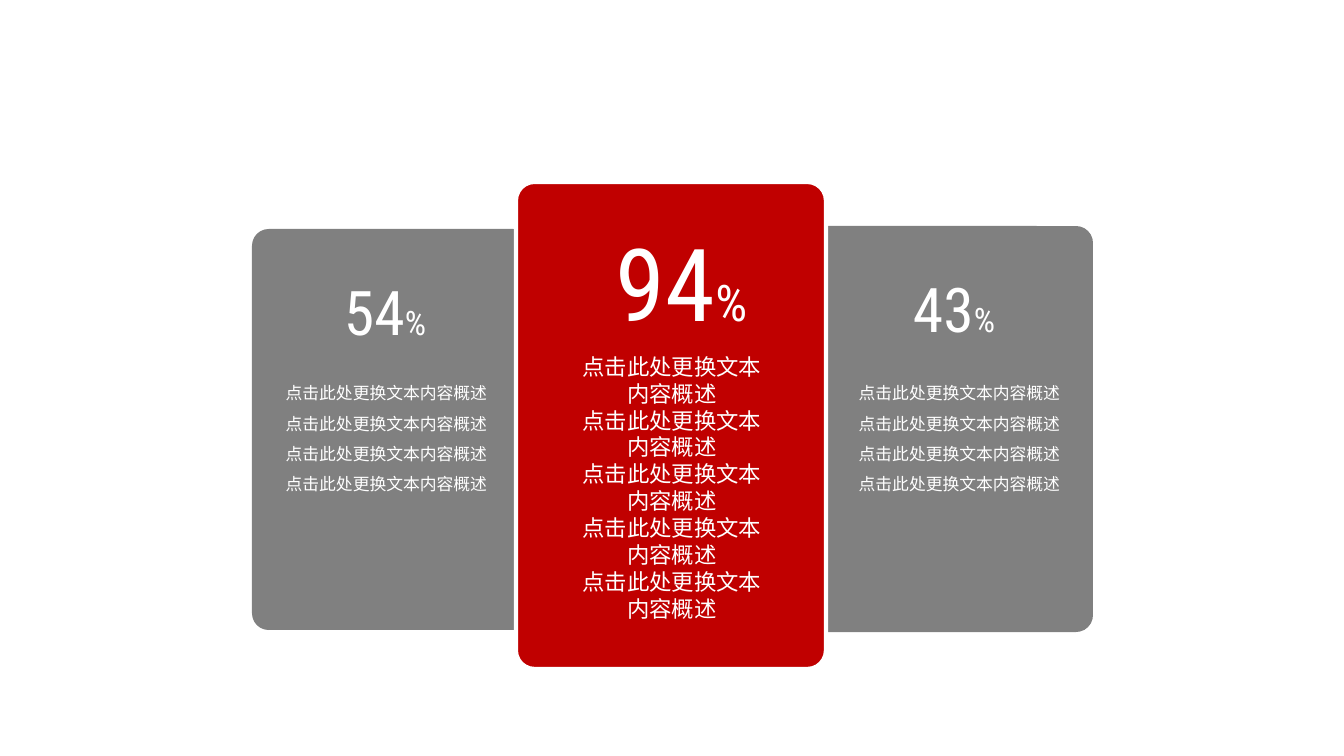
"""Build a slide with three percentage cards, the middle one highlighted."""
from lxml.etree import SubElement
from pptx import Presentation
from pptx.dml.color import RGBColor
from pptx.enum.shapes import MSO_SHAPE
from pptx.enum.text import MSO_AUTO_SIZE, PP_ALIGN
from pptx.oxml.ns import qn
from pptx.util import Emu, Pt

WHITE = RGBColor(0xFF, 0xFF, 0xFF)
GREY = RGBColor(0x80, 0x80, 0x80)
RED = RGBColor(0xC0, 0x00, 0x00)
NUMBER_FONT = "Roboto Condensed"
BODY_FONT = "Noto Sans CJK SC"
SLIDE_W, SLIDE_H = 1344, 756
EMU_PER_PX = 12192000 / SLIDE_W

SIDE_LINES = ["点击此处更换文本内容概述"] * 4
MAIN_LINES = ["点击此处更换文本", "内容概述"] * 5
SIDE_STYLE = {"sizes": (44, 24), "body_size": 12, "spacing": 1.5, "wrap": True}
MAIN_STYLE = {"sizes": (72, 36), "body_size": 16, "spacing": 1, "wrap": False}

CARDS = [
    {"value": "43", "fill": GREY, "outline": None, "lines": SIDE_LINES,
     "card": (810, 226, 283, 406), "number": (903, 266, 108, 85),
     "body": (840, 368, 239, 129), **SIDE_STYLE},
    {"value": "54", "fill": GREY, "outline": None, "lines": SIDE_LINES,
     "card": (252, 229, 278, 401), "number": (334, 269, 108, 85),
     "body": (267, 368, 239, 190), **SIDE_STYLE},
    {"value": "94", "fill": RED, "outline": WHITE, "lines": MAIN_LINES,
     "card": (516, 182, 310, 487), "number": (606, 216, 161, 132),
     "body": (571, 348, 202, 336), **MAIN_STYLE},
]


def px(n):
    return Emu(round(n * EMU_PER_PX))


def add_card(s, box, fill, outline):
    sp = s.shapes.add_shape(MSO_SHAPE.ROUNDED_RECTANGLE, *map(px, box))
    sp.adjustments[0] = 0.06
    sp.shadow.inherit = False
    sp.fill.solid()
    sp.fill.fore_color.rgb = fill
    if outline is None:
        sp.line.fill.background()
    else:
        sp.line.color.rgb = outline
        sp.line.width = Pt(3)


def add_frame(s, box, wrap):
    tf = s.shapes.add_textbox(*map(px, box)).text_frame
    tf.word_wrap = wrap
    tf.auto_size = MSO_AUTO_SIZE.SHAPE_TO_FIT_TEXT
    return tf


def add_run(p, text, size, font):
    r = p.add_run()
    r.text = text
    r.font.size = Pt(size)
    r.font.name = font
    r.font.color.rgb = WHITE
    SubElement(r.font._element, qn("a:ea")).set("typeface", font)


def add_number(s, card):
    p = add_frame(s, card["number"], False).paragraphs[0]
    for text, size in zip((card["value"], "%"), card["sizes"]):
        add_run(p, text, size, NUMBER_FONT)


def add_body(s, card):
    tf = add_frame(s, card["body"], card["wrap"])
    for i, line in enumerate(card["lines"]):
        p = tf.add_paragraph() if i else tf.paragraphs[0]
        p.alignment = PP_ALIGN.CENTER
        p.line_spacing = float(card["spacing"])
        add_run(p, line, card["body_size"], BODY_FONT)


def main():
    prs = Presentation()
    prs.slide_width, prs.slide_height = px(SLIDE_W), px(SLIDE_H)
    s = prs.slides.add_slide(prs.slide_layouts[6])
    for card in CARDS:
        add_card(s, card["card"], card["fill"], card["outline"])
    for card in CARDS:
        add_number(s, card)
        add_body(s, card)
    prs.save("out.pptx")


if __name__ == "__main__":
    main()
